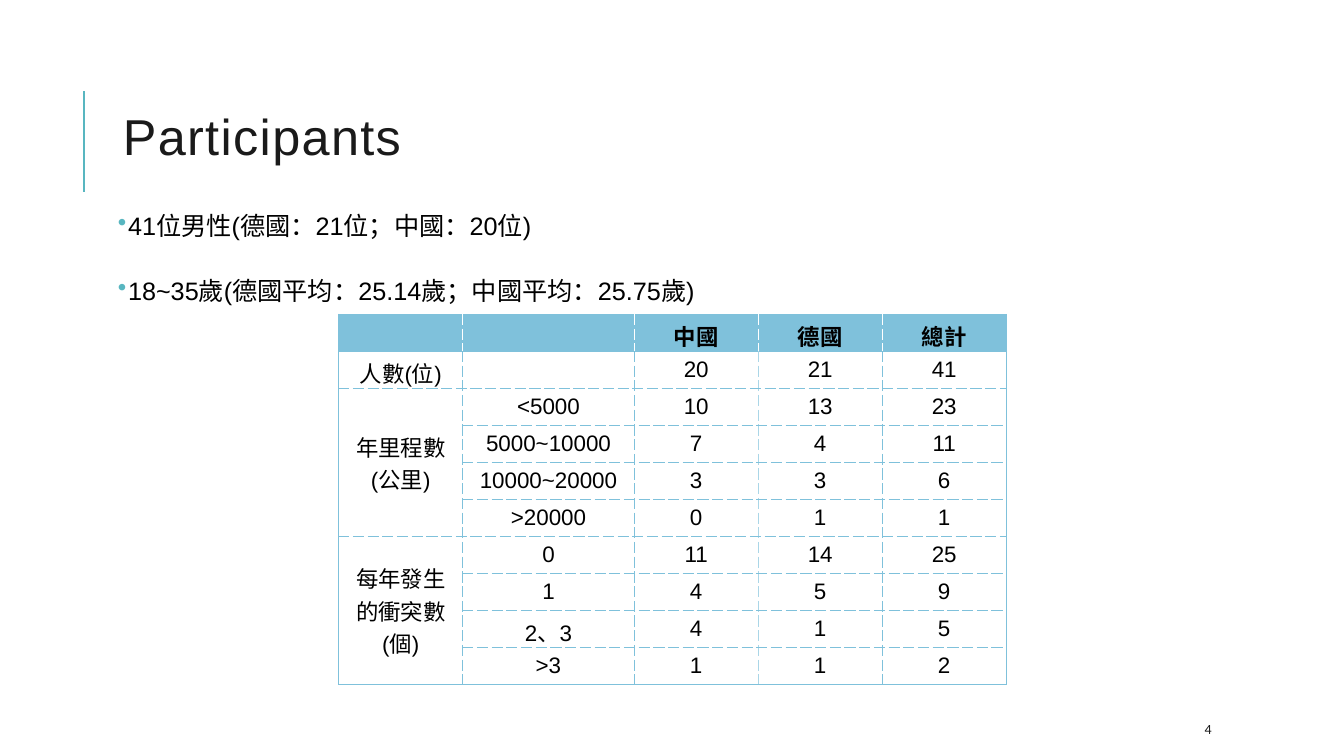
from lxml.etree import SubElement
from pptx import Presentation
from pptx.dml.color import RGBColor
from pptx.enum.shapes import MSO_CONNECTOR
from pptx.enum.text import MSO_ANCHOR, PP_ALIGN
from pptx.oxml.ns import qn
from pptx.util import Inches, Pt

COLORS = {
    "accent": "58B6C0",
    "title": "1A1A1A",
    "text": "000000",
    "border": "7FC1DB",
    "light_border": "AAD6E7",
    "white": "FFFFFF",
}
TITLE = "Participants"
BULLETS = [
    "41位男性(德國：21位；中國：20位)",
    "18~35歲(德國平均：25.14歲；中國平均：25.75歲)",
]
PAGE_NUMBER = "4"
ROWS = [
    ("", "", "中國", "德國", "總計"),
    ("人數(位)", "", "20", "21", "41"),
    ("年里程數(公里)", "<5000", "10", "13", "23"),
    ("", "5000~10000", "7", "4", "11"),
    ("", "10000~20000", "3", "3", "6"),
    ("", ">20000", "0", "1", "1"),
    ("每年發生的衝突數\n(個)", "0", "11", "14", "25"),
    ("", "1", "4", "5", "9"),
    ("", "2、3", "4", "1", "5"),
    ("", ">3", "1", "1", "2"),
]
GROUP_STARTS = (2, 6)
GROUP_SIZE = 4
COLUMN_WIDTHS = (1.23, 1.7, 1.23, 1.23, 1.23)
ROW_HEIGHT = 0.28


def rgb(name):
    return RGBColor.from_string(COLORS[name])


def style_paragraph(paragraph, size, color, font_name="Arial", bold=False):
    font = paragraph.font
    font.name, font.size, font.bold = font_name, Pt(size), bold
    font.color.rgb = rgb(color)


def add_text_frame(slide, left, top, width, height, anchor):
    box = slide.shapes.add_textbox(*map(Inches, (left, top, width, height)))
    frame = box.text_frame
    frame.word_wrap = True
    frame.vertical_anchor = anchor
    return frame


def add_bullet(paragraph):
    properties = paragraph._p.get_or_add_pPr()
    properties.set("marL", str(Inches(0.1)))
    properties.set("indent", str(-Inches(0.1)))
    # Bullet elements come before the default run properties
    default_font = properties.find(qn("a:defRPr"))
    bullet_color = SubElement(properties, qn("a:buClr"))
    SubElement(bullet_color, qn("a:srgbClr"), val=COLORS["accent"])
    bullet = SubElement(properties, qn("a:buChar"), char="•")
    default_font.addprevious(bullet_color)
    default_font.addprevious(bullet)


def vertical_edge(row, edge):
    """Colour and dash of the border left of column number edge."""
    if edge in (0, len(COLUMN_WIDTHS)):
        return "border", "solid"
    if row == 0:
        return "white", "sysDash"
    return ("light_border" if edge == 3 else "border"), "sysDash"


def horizontal_edge(edge):
    """Colour and dash of the border above row number edge."""
    return "border", "solid" if edge in (0, 1, len(ROWS)) else "sysDash"


def set_borders(cell, row, column):
    edges = {
        "a:lnL": vertical_edge(row, column),
        "a:lnR": vertical_edge(row, column + 1),
        "a:lnT": horizontal_edge(row),
        "a:lnB": horizontal_edge(row + cell.span_height),
    }
    properties = cell._tc.get_or_add_tcPr()
    for tag, (color, dash) in edges.items():
        line = SubElement(properties, qn(tag), w=str(Pt(1)))
        fill = SubElement(line, qn("a:solidFill"))
        SubElement(fill, qn("a:srgbClr"), val=COLORS[color])
        SubElement(line, qn("a:prstDash"), val=dash)


def add_participant_table(slide):
    frame = slide.shapes.add_table(
        len(ROWS), len(COLUMN_WIDTHS), Inches(3.36), Inches(3.12),
        Inches(sum(COLUMN_WIDTHS)), Inches(ROW_HEIGHT * len(ROWS)))
    table = frame.table
    table.first_row = table.horz_banding = False
    for column, width in zip(table.columns, COLUMN_WIDTHS):
        column.width = Inches(width)
    for row in table.rows:
        row.height = Inches(ROW_HEIGHT)
    for start in GROUP_STARTS:
        table.cell(start, 0).merge(table.cell(start + GROUP_SIZE - 1, 0))

    for row, values in enumerate(ROWS):
        for column, value in enumerate(values):
            cell = table.cell(row, column)
            if cell.is_spanned:
                continue
            set_borders(cell, row, column)
            cell.fill.solid()
            cell.fill.fore_color.rgb = rgb("white" if row else "border")
            cell.vertical_anchor = MSO_ANCHOR.MIDDLE
            cell.text = value
            for paragraph in cell.text_frame.paragraphs:
                paragraph.alignment = PP_ALIGN.CENTER
                style_paragraph(paragraph, 16, "text", bold=row == 0)


def main():
    presentation = Presentation()
    presentation.slide_width = Inches(13.33)
    presentation.slide_height = Inches(7.5)
    slide = presentation.slides.add_slide(presentation.slide_layouts[6])

    title_line = slide.shapes.add_connector(
        MSO_CONNECTOR.STRAIGHT, Inches(0.83), Inches(1.9), Inches(0.83), Inches(0.9))
    title_line.line.color.rgb = rgb("accent")
    title_line.line.width = Pt(1.5)
    SubElement(title_line._element.spPr, qn("a:effectLst"))

    title = add_text_frame(slide, 1.12, 0.91, 10.63, 0.98, MSO_ANCHOR.MIDDLE).paragraphs[0]
    title_run = title.add_run()
    title_run.text = TITLE
    title.line_spacing = 0.8
    style_paragraph(title, 36, "title")
    title_run._r.get_or_add_rPr().set("spc", "100")

    body = add_text_frame(slide, 1.12, 1.89, 10.63, 5.01, MSO_ANCHOR.TOP)
    body.margin_left = body.margin_right = Inches(0.05)
    body.text = "\n".join(BULLETS)
    for paragraph in body.paragraphs:
        paragraph.line_spacing = 1.5
        paragraph.space_before, paragraph.space_after = Pt(12), Pt(2)
        style_paragraph(paragraph, 18, "text")
        add_bullet(paragraph)

    add_participant_table(slide)

    page_number = add_text_frame(slide, 11.85, 7.08, 1.06, 0.3, MSO_ANCHOR.MIDDLE)
    page_number.text = PAGE_NUMBER
    style_paragraph(page_number.paragraphs[0], 10, "title", "Calibri")

    presentation.save("out.pptx")


if __name__ == "__main__":
    main()
